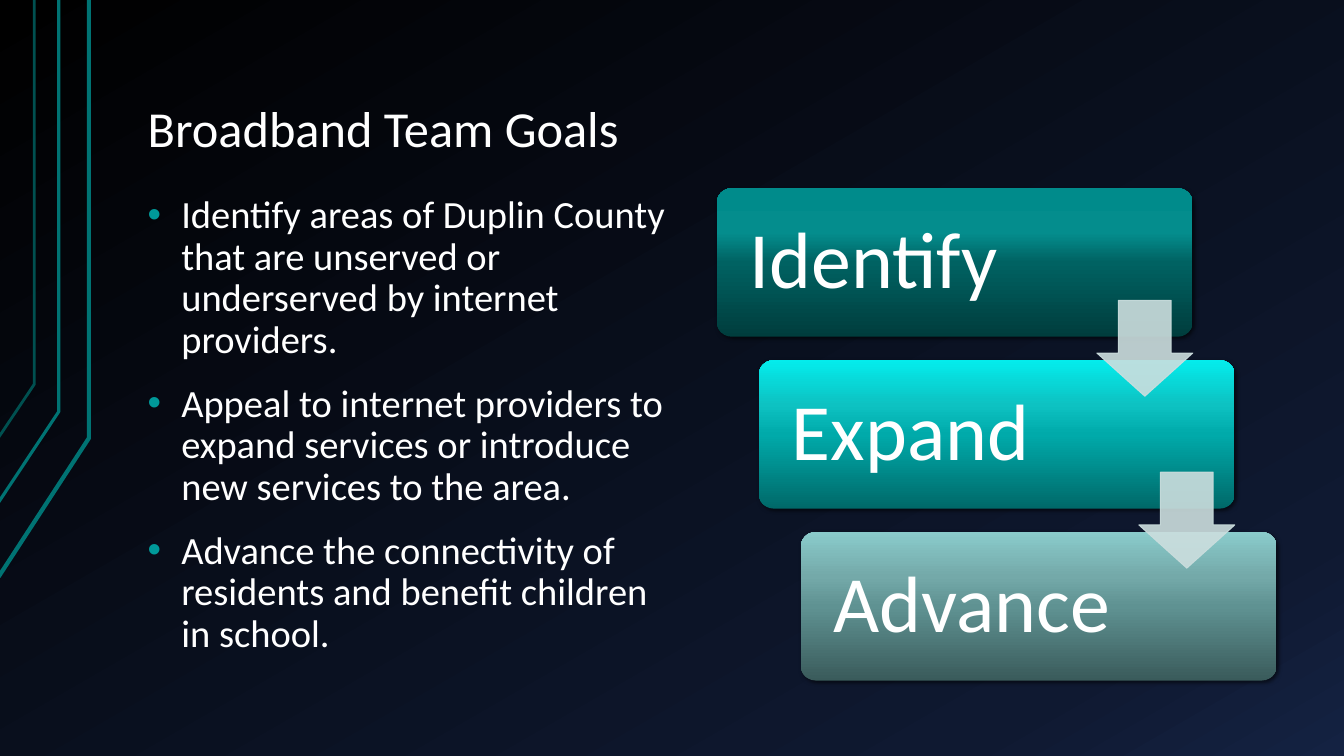
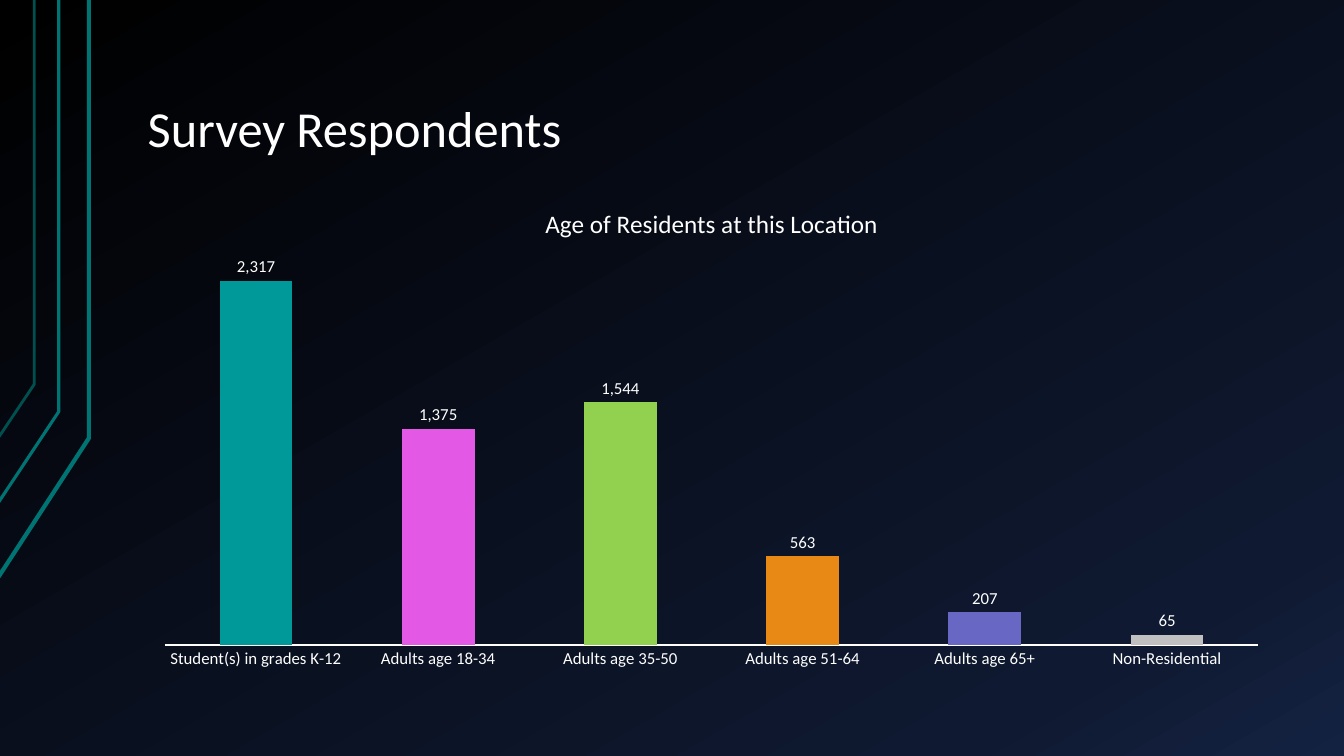
"""Build two slides on the goals of a county broadband team and its survey."""
import lxml.etree
import pptx
import pptx.chart.data
import pptx.dml.color
import pptx.enum.chart
import pptx.enum.shapes
import pptx.enum.text
import pptx.oxml
import pptx.oxml.ns
import pptx.util

Pt = pptx.util.Pt
RGB = pptx.dml.color.RGBColor.from_string
qn = pptx.oxml.ns.qn
add_node = lxml.etree.SubElement
SHAPE = pptx.enum.shapes.MSO_SHAPE
ANCHOR = pptx.enum.text.MSO_ANCHOR

THEME = {
    "font": "Calibri",
    "text": "FFFFFF",
    "bullet": "009999",
    "arrow": "CCDEDE",
    "shadow": "000000",
    "backdrop": [(0, "000000"), (85, "0F1931"), (100, "142242")],
    "bars": ["009999", "E359E6", "92D050", "E98915", "6868C4", "C0C0C0"],
    "title_size": 36,
    "body_size": 27.5,
    "card_size": 57,
    "chart_title_size": 18,
    "label_size": 12,
}

RAILS = [
    ("007373", 3, [(-1, 412), (63.5, 313), (63.5, 0)]),
    ("007373", 2.25, [(-1.5, 359.5), (42, 294), (42, 0)]),
    ("005050", 2, [(-1, 312.5), (24.5, 274.5), (24.5, 0)]),
]
GOALS = [
    "Identify areas of Duplin County that are unserved or underserved by internet providers.",
    "Appeal to internet providers to expand services or introduce new services to the area.",
    "Advance the connectivity of residents and benefit children in school.",
]
STEPS = [
    ("Identify", [(0, "003D3D"), (50, "006262"), (70, "048D8D"), (100, "008B8B")]),
    ("Expand", [(0, "006969"), (50, "00AAAA"), (70, "0DC2C2"), (100, "04ECEC")]),
    ("Advance", [(0, "3A5B5B"), (50, "5F9292"), (70, "74A9A9"), (100, "8ACBCB")]),
]
RESPONDENTS = {
    "Student(s) in grades K-12": 2317,
    "Adults age 18-34": 1375,
    "Adults age 35-50": 1544,
    "Adults age 51-64": 563,
    "Adults age 65+": 207,
    "Non-Residential": 65,
}


def fill_gradient(fill, element, stops, angle):
    """Fill with colour stops along a clockwise angle."""
    fill.gradient()
    fill.gradient_angle = 360 - angle
    stop_list = next(element.iter(qn("a:gsLst")))
    for old_stop in list(stop_list):
        stop_list.remove(old_stop)
    for position, colour in stops:
        stop = add_node(stop_list, qn("a:gs"), pos=str(position * 1000))
        add_node(stop, qn("a:srgbClr"), val=colour)


def write_text(shape, lines, size, anchor, inset):
    """Write one paragraph per line and return the paragraphs."""
    frame = shape.text_frame
    frame.word_wrap = True
    frame.vertical_anchor = anchor
    frame.margin_left = frame.margin_right = Pt(inset)
    frame.margin_top = frame.margin_bottom = Pt(5)
    for number, line in enumerate(lines):
        paragraph = frame.add_paragraph() if number else frame.paragraphs[0]
        paragraph.alignment = pptx.enum.text.PP_ALIGN.LEFT
        paragraph.line_spacing = 0.9
        run = paragraph.add_run()
        run.text = line
        run.font.name = THEME["font"]
        run.font.size = Pt(size)
        run.font.color.rgb = RGB(THEME["text"])
    return frame.paragraphs


deck = pptx.Presentation()
deck.slide_width, deck.slide_height = Pt(960), Pt(540)
master = deck.slide_master
fill_gradient(master.background.fill, master.element, THEME["backdrop"], 60)

slides = []
for heading in ("Broadband Team Goals", "Survey Respondents"):
    slide = deck.slides.add_slide(deck.slide_layouts[6])
    for colour, weight, points in RAILS:
        start, *rest = [(Pt(x), Pt(y)) for x, y in points]
        outline = slide.shapes.build_freeform(*start)
        outline.add_line_segments(rest, close=False)
        rail = outline.convert_to_shape()
        rail.shadow.inherit = False
        rail.fill.background()
        rail.line.color.rgb = RGB(colour)
        rail.line.width = Pt(weight)
    title = slide.shapes.add_textbox(Pt(96), Pt(21.5), Pt(816), Pt(96.5))
    write_text(title, [heading], THEME["title_size"], ANCHOR.BOTTOM, 9.5)
    slides.append(slide)
goals_slide, survey_slide = slides

goals = goals_slide.shapes.add_textbox(Pt(96), Pt(134.5), Pt(400), Pt(351.5))
for paragraph in write_text(goals, GOALS, THEME["body_size"], ANCHOR.TOP, 9.5):
    paragraph.space_before = Pt(16)
    properties = paragraph._p.get_or_add_pPr()
    properties.set("marL", str(Pt(24)))
    properties.set("indent", str(-Pt(24)))
    bullet_colour = add_node(properties, qn("a:buClr"))
    add_node(bullet_colour, qn("a:srgbClr"), val=THEME["bullet"])
    add_node(properties, qn("a:buFont"), typeface="Arial")
    add_node(properties, qn("a:buChar"), char="•")

card_width, card_height, arrow_side = 340, 106, 68.5
corners = [(512 + 30 * i, 134.5 + 122.8 * i) for i in range(len(STEPS))]
for (left, top), (step, stops) in zip(corners, STEPS):
    card = goals_slide.shapes.add_shape(
        SHAPE.ROUNDED_RECTANGLE, Pt(left), Pt(top), Pt(card_width), Pt(card_height))
    card.adjustments[0] = 0.1
    fill_gradient(card.fill, card.element, stops, 270)
    card.line.fill.background()
    card.shadow.inherit = False
    effects = next(card.element.iter(qn("a:effectLst")))
    shadow = add_node(effects, qn("a:outerShdw"), blurRad=str(Pt(3)), dist=str(Pt(2)),
                      dir=str(45 * 60000), rotWithShape="0")
    shade = add_node(shadow, qn("a:srgbClr"), val=THEME["shadow"])
    add_node(shade, qn("a:alpha"), val="60000")
    write_text(card, [step], THEME["card_size"], ANCHOR.MIDDLE, 20.5)

for left, top in corners[:-1]:
    arrow = goals_slide.shapes.add_shape(
        SHAPE.DOWN_ARROW, Pt(left + card_width - arrow_side), Pt(top + 80),
        Pt(arrow_side), Pt(arrow_side))
    arrow.adjustments[0], arrow.adjustments[1] = 0.55, 0.45
    arrow.shadow.inherit = False
    arrow.fill.solid()
    arrow.fill.fore_color.rgb = arrow.line.color.rgb = RGB(THEME["arrow"])
    arrow.line.width = Pt(0.75)
    for tint in arrow.element.spPr.iter(qn("a:srgbClr")):
        add_node(tint, qn("a:alpha"), val="90000")

survey = pptx.chart.data.CategoryChartData(number_format="#,##0")
survey.categories = list(RESPONDENTS)
survey.add_series("Series 1", list(RESPONDENTS.values()))
chart = survey_slide.shapes.add_chart(
    pptx.enum.chart.XL_CHART_TYPE.COLUMN_CLUSTERED,
    Pt(101.5), Pt(126), Pt(813.5), Pt(360), survey).chart
chart.has_legend = False
chart.font.name = THEME["font"]
chart.font.size = Pt(THEME["label_size"])
chart.font.color.rgb = RGB(THEME["text"])

chart.has_title = True
caption = chart.chart_title.text_frame.paragraphs[0].add_run()
caption.text = "Age of Residents at this Location"
caption.font.name = THEME["font"]
caption.font.size = Pt(THEME["chart_title_size"])
caption.font.bold = False
caption.font.color.rgb = RGB(THEME["text"])

ages = chart.category_axis
ages.major_tick_mark = pptx.enum.chart.XL_TICK_MARK.NONE
ages.format.line.color.rgb = RGB(THEME["text"])
ages.format.line.width = Pt(0.75)
counts = chart.value_axis
counts.visible = False
counts.has_major_gridlines = False
counts.minimum_scale, counts.maximum_scale = 0, 2500

bars = chart.plots[0]
bars.gap_width, bars.overlap, bars.vary_by_categories = 150, -25, False
bars.has_data_labels = True
labels = bars.data_labels
labels.show_value = True
labels.number_format, labels.number_format_is_linked = "#,##0", False
labels.position = pptx.enum.chart.XL_LABEL_POSITION.OUTSIDE_END
labels.font.name = THEME["font"]
labels.font.size = Pt(THEME["label_size"])
labels.font.color.rgb = RGB(THEME["text"])
for number, colour in enumerate(THEME["bars"]):
    bar = bars.series[0].points[number].format.fill
    bar.solid()
    bar.fore_color.rgb = RGB(colour)

placements = [
    (chart.chart_title.element, 1,
     {"xMode": "edge", "yMode": "edge", "x": 0.35, "y": 0.05}),
    (next(chart.element.iter(qn("c:plotArea"))), 0,
     {"layoutTarget": "inner", "xMode": "edge", "yMode": "edge",
      "x": 0.02, "y": 0.15, "w": 0.96, "h": 0.78}),
]
for part, position, settings in placements:
    for old_layout in part.findall(qn("c:layout")):
        part.remove(old_layout)
    layout = lxml.etree.Element(qn("c:layout"))
    part.insert(position, layout)
    manual = add_node(layout, qn("c:manualLayout"))
    for setting, value in settings.items():
        add_node(manual, qn(f"c:{setting}"), val=str(value))

deck.save("out.pptx")
